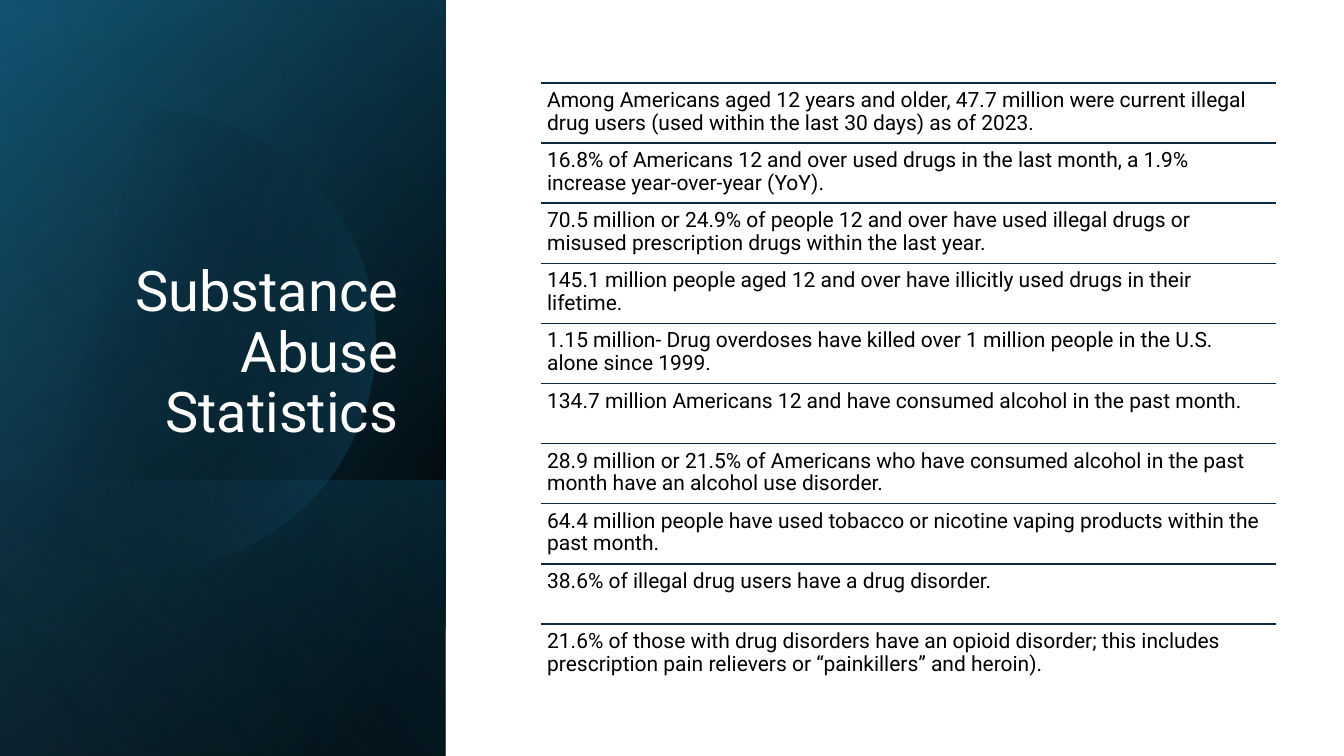
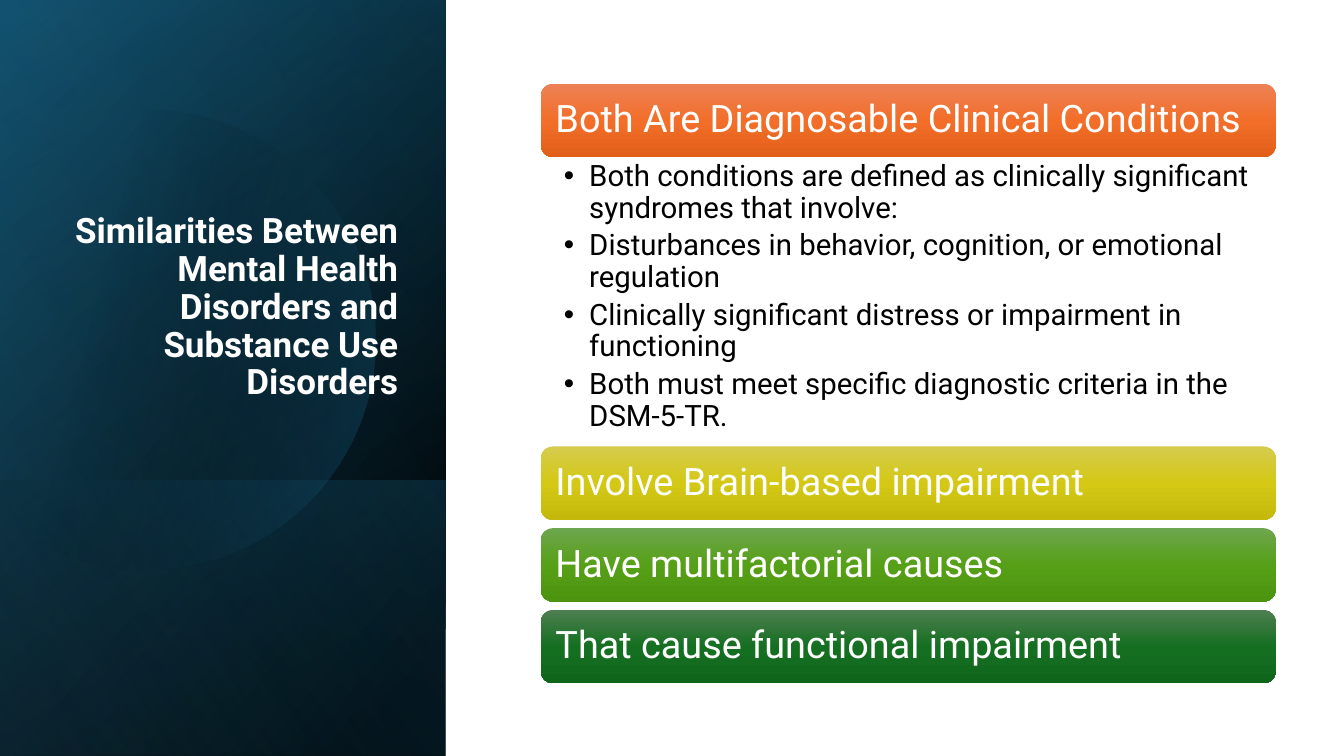
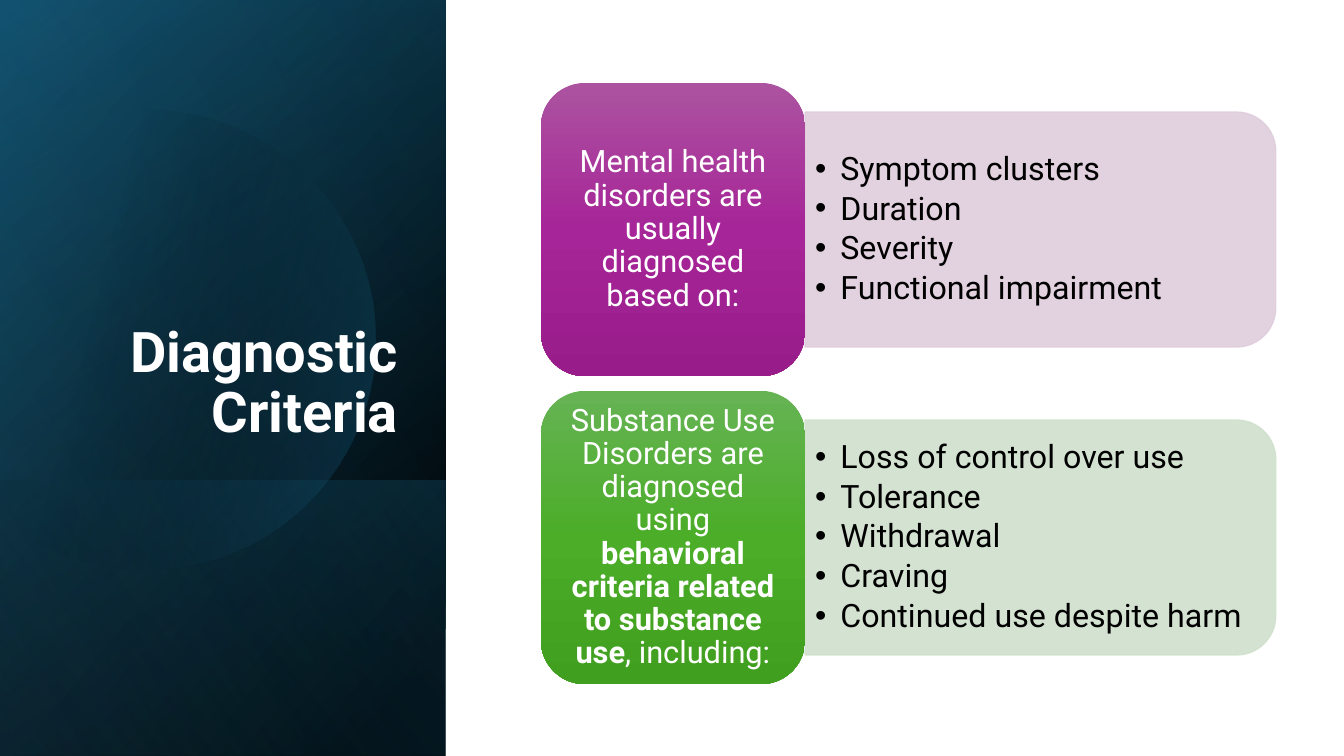
from dataclasses import dataclass
from math import cos, radians, sin

from lxml.etree import SubElement
from pptx import Presentation
from pptx.dml.color import RGBColor
from pptx.enum.shapes import MSO_CONNECTOR as Connector, MSO_SHAPE as Preset
from pptx.enum.text import MSO_ANCHOR as Anchor, PP_ALIGN as Align
from pptx.oxml.ns import qn
from pptx.util import Cm, Pt


@dataclass(frozen=True)
class Theme:
    font: str = "Roboto"
    bullet_font: str = "Arial"
    white: str = "FFFFFF"
    black: str = "000000"
    rule: str = "0E2841"
    deep: str = "104862"
    teal: str = "156082"
    sky: str = "46B1E1"
    orange: tuple = ("ED8257", "F26E29", "E25F1A")
    yellow: tuple = ("D5CB4E", "D4C815", "C4B90B")
    lime: tuple = ("6DA64E", "56A017", "4C930F")
    forest: tuple = ("4D7E50", "156F21", "0F661B")
    purple: tuple = ("AC53A0", "A62598", "991C8B")
    green: tuple = ("66B354", "4BAD28", "409F1E")
    pale_purple: str = "DFCDDC"
    pale_green: str = "D0E1CD"
    title_size: float = 40
    long_title_size: float = 25
    statement_size: float = 15
    bar_size: float = 27
    detail_size: float = 21
    card_size: float = 22
    list_size: float = 23


THEME = Theme()
WIDTH, HEIGHT = 33.87, 19.05
PANEL_WIDTH = 11.23
LEFT, CONTENT_WIDTH = 13.63, 18.52


def write(shape, paragraphs, size, color=THEME.black, bold=False, align=Align.LEFT,
          anchor=Anchor.TOP, insets=(0.25, 0.13, 0.25, 0.13), bullet=False, after=0):
    """Fill a shape with paragraphs; each is a string or a list of (text, bold) runs."""
    frame = shape.text_frame
    frame.word_wrap = True
    frame.vertical_anchor = anchor
    (frame.margin_left, frame.margin_top,
     frame.margin_right, frame.margin_bottom) = map(Cm, insets)
    for index, content in enumerate(paragraphs):
        paragraph = frame.add_paragraph() if index else frame.paragraphs[0]
        paragraph.alignment = align
        paragraph.line_spacing = 0.9
        paragraph.space_after = Pt(after)
        if bullet:
            properties = paragraph._p.get_or_add_pPr()
            properties.set("marL", str(Cm(0.64)))
            properties.set("indent", str(-Cm(0.64)))
            SubElement(properties, qn("a:buFont")).set("typeface", THEME.bullet_font)
            SubElement(properties, qn("a:buChar")).set("char", "•")
        runs = [(content, bold)] if isinstance(content, str) else content
        for text, run_bold in runs:
            run = paragraph.add_run()
            run.text = text
            run.font.name = THEME.font
            run.font.size = Pt(size)
            run.font.bold = run_bold
            run.font.color.rgb = RGBColor.from_string(color)


def shade(shape, stops, angle):
    """Give a linear gradient; each stop is (position, color, opacity), in percent."""
    shape.fill.gradient()
    shape.fill.gradient_angle = 360 - angle
    stop_list = shape._element.spPr.find(".//" + qn("a:gsLst"))
    for stop in list(stop_list):
        stop_list.remove(stop)
    for position, color, opacity in stops:
        stop = SubElement(stop_list, qn("a:gs"), pos=str(position * 1000))
        paint = SubElement(stop, qn("a:srgbClr"), val=color)
        if opacity < 100:
            SubElement(paint, qn("a:alpha"), val=str(opacity * 1000))


class Deck:
    def __init__(self):
        self.presentation = Presentation()
        self.presentation.slide_width = Cm(WIDTH)
        self.presentation.slide_height = Cm(HEIGHT)
        self.slide = None

    def start(self, title, size=THEME.title_size, bold=False, bottom=0.13):
        self.slide = self.presentation.slides.add_slide(self.presentation.slide_layouts[6])
        self.side_panel()
        self.text(1.62, 4.68, 8.66, 6.66, [title], size=size, bold=bold, color=THEME.white,
                  align=Align.RIGHT, anchor=Anchor.BOTTOM, insets=(0.25, 0.13, 0.25, bottom))

    def shape(self, preset, left, top, width, height):
        shape = self.slide.shapes.add_shape(preset, Cm(left), Cm(top), Cm(width), Cm(height))
        shape.shadow.inherit = False
        shape.line.fill.background()
        return shape

    def turned(self, preset, left, top, width, height):
        """Add a shape turned by 90 degrees that covers the given area."""
        shift = (width - height) / 2
        shape = self.shape(preset, left + shift, top - shift, height, width)
        shape.rotation = 90
        return shape

    def text(self, left, top, width, height, paragraphs, **style):
        box = self.slide.shapes.add_textbox(Cm(left), Cm(top), Cm(width), Cm(height))
        write(box, paragraphs, **style)

    def rule(self, left, top, width):
        line = self.slide.shapes.add_connector(
            Connector.STRAIGHT, Cm(left), Cm(top), Cm(left + width), Cm(top))
        line.line.color.rgb = RGBColor.from_string(THEME.rule)
        line.line.width = Pt(1)
        SubElement(line._element.spPr, qn("a:effectLst"))

    def layer(self, top, stops, angle):
        layer = self.turned(Preset.RECTANGLE, 0, top, PANEL_WIDTH, HEIGHT - top)
        layer._element.spPr.xfrm.set("flipH", "1")
        shade(layer, stops, angle)

    def glow(self):
        """Add a faint disc cut off by the left slide edge."""
        center_x, center_y, radius = 3.66, 8.56, 5.79
        points = [(Cm(center_x + radius * cos(radians(degree))),
                   Cm(center_y + radius * sin(radians(degree))))
                  for degree in range(-129, 130, 3)]
        builder = self.slide.shapes.build_freeform(*points[0])
        builder.add_line_segments(points[1:], close=True)
        disc = builder.convert_to_shape()
        disc.shadow.inherit = False
        disc.line.fill.background()
        shade(disc, [(29, THEME.black, 0), (100, THEME.teal, 43)], 14)

    def side_panel(self):
        self.layer(0, [(8, THEME.black, 100), (100, THEME.deep, 100)], 50)
        self.layer(0, [(0, THEME.black, 0), (99, THEME.teal, 46)], 30)
        self.layer(12.11, [(2, THEME.teal, 29), (100, THEME.black, 30)], 130)
        self.glow()
        self.layer(0, [(0, THEME.black, 0), (99, THEME.sky, 11)], 120)

    def block(self, left, top, width, height, colors, paragraphs, **style):
        """Add a rounded, shaded block with white text."""
        block = self.shape(Preset.ROUNDED_RECTANGLE, left, top, width, height)
        shade(block, [(50 * index, color, 100) for index, color in enumerate(colors)], 90)
        write(block, paragraphs, color=THEME.white, anchor=Anchor.MIDDLE, **style)

    def list_panel(self, left, top, width, height, color, items):
        panel = self.turned(Preset.ROUND_2_SAME_RECTANGLE, left, top, width, height)
        panel.fill.solid()
        panel.fill.fore_color.rgb = RGBColor.from_string(color)
        panel.line.color.rgb = RGBColor.from_string(color)
        panel.line.width = Pt(1)
        for paint in panel._element.spPr.iter(qn("a:srgbClr")):
            SubElement(paint, qn("a:alpha"), val="90000")
        self.text(left, top, width, height, items, size=THEME.list_size,
                  anchor=Anchor.MIDDLE, bullet=True, after=3.5)


def statistics(deck):
    deck.start("Substance Abuse Statistics")
    statements = [
        "Among Americans aged 12 years and older, 47.7 million were current illegal drug users "
        "(used within the last 30 days) as of 2023.",
        "16.8% of Americans 12 and over used drugs in the last month, a 1.9% increase "
        "year-over-year (YoY).",
        "70.5 million or 24.9% of people 12 and over have used illegal drugs or misused "
        "prescription drugs within the last year.",
        "145.1 million people aged 12 and over have illicitly used drugs in their lifetime.",
        "1.15 million- Drug overdoses have killed over 1 million people in the U.S. alone "
        "since 1999.",
        "134.7 million Americans 12 and have consumed alcohol in the past month.",
        "28.9 million or 21.5% of Americans who have consumed alcohol in the past month have "
        "an alcohol use disorder.",
        "64.4 million people have used tobacco or nicotine vaping products within the past "
        "month.",
        "38.6% of illegal drug users have a drug disorder.",
        "21.6% of those with drug disorders have an opioid disorder; this includes "
        "prescription pain relievers or “painkillers” and heroin).",
    ]
    first_top, row_height = 2.09, 15.15 / len(statements)
    for index, statement in enumerate(statements):
        top = first_top + index * row_height
        deck.rule(LEFT, top, CONTENT_WIDTH)
        deck.text(LEFT, top, CONTENT_WIDTH, row_height, [statement],
                  size=THEME.statement_size, insets=(0.16,) * 4)


def similarities(deck):
    deck.start("Similarities Between Mental Health Disorders and Substance Use Disorders",
               size=THEME.long_title_size, bold=True, bottom=1.2)
    # Heading bars
    first_lower, pitch = 11.25, 2.06
    bars = [
        (2.11, THEME.orange, "Both Are Diagnosable Clinical Conditions"),
        (first_lower, THEME.yellow, "Involve Brain-based impairment"),
        (first_lower + pitch, THEME.lime, "Have multifactorial causes"),
        (first_lower + 2 * pitch, THEME.forest, "That cause functional impairment"),
    ]
    for top, colors, heading in bars:
        deck.block(LEFT, top, CONTENT_WIDTH, 1.85, colors, [heading],
                   size=THEME.bar_size, insets=(0.28, 0.2, 0.28, 0.2))
    # Details under the first bar
    deck.text(LEFT, 3.96, CONTENT_WIDTH, 7.29, [
        "Both conditions are defined as clinically significant syndromes that involve:",
        "Disturbances in behavior, cognition, or emotional regulation",
        "Clinically significant distress or impairment in functioning",
        "Both must meet specific diagnostic criteria in the DSM-5-TR.",
    ], size=THEME.detail_size, insets=(0.58, 0.1, 0.53, 0.1), bullet=True, after=4.2)


def criteria(deck):
    deck.start("Diagnostic Criteria", bold=True)
    groups = [
        (THEME.purple, THEME.pale_purple,
         "Mental health disorders are usually diagnosed based on:",
         ["Symptom clusters", "Duration", "Severity", "Functional impairment"]),
        (THEME.green, THEME.pale_green,
         [("Substance Use Disorders are diagnosed using ", False),
          ("behavioral criteria related to substance use", True),
          (", including:", False)],
         ["Loss of control over use", "Tolerance", "Withdrawal", "Craving",
          "Continued use despite harm"]),
    ]
    card_width, card_height, panel_height = 6.66, 7.39, 5.92
    for index, (colors, pale, heading, items) in enumerate(groups):
        top = 2.09 + index * 7.76
        deck.list_panel(LEFT + card_width, top + (card_height - panel_height) / 2,
                        CONTENT_WIDTH - card_width, panel_height, pale, items)
        # The rounded corners already narrow the text area, so the insets stay small
        deck.block(LEFT, top, card_width, card_height, colors, [heading],
                   size=THEME.card_size, align=Align.CENTER, insets=(0.2, 0.1, 0.2, 0.1))


def main():
    deck = Deck()
    for build in (statistics, similarities, criteria):
        build(deck)
    deck.presentation.save("out.pptx")


if __name__ == "__main__":
    main()
